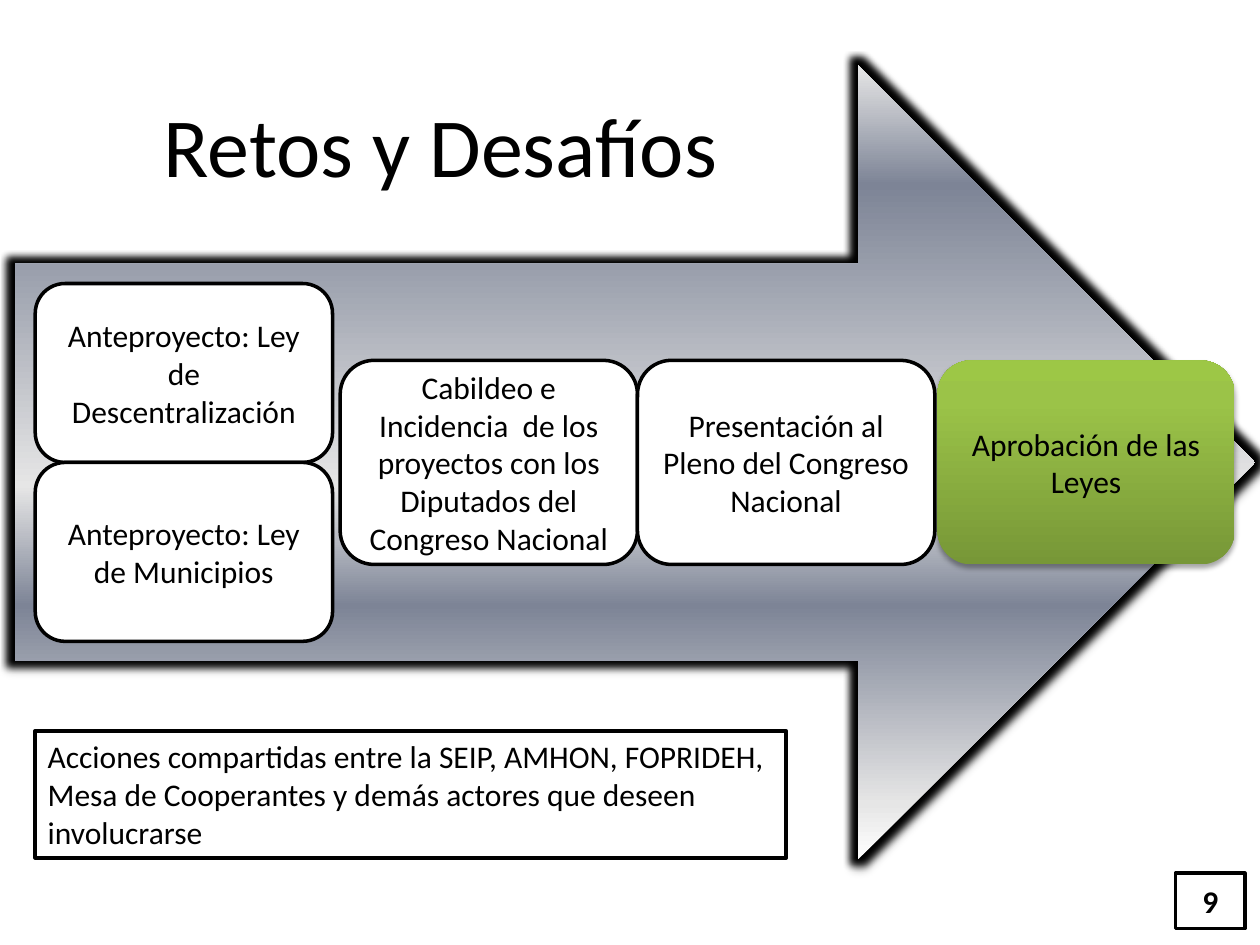
from dataclasses import dataclass

from lxml import etree
from pptx import Presentation
from pptx.dml.color import RGBColor
from pptx.enum.shapes import MSO_SHAPE
from pptx.enum.text import MSO_ANCHOR, PP_ALIGN
from pptx.oxml.ns import qn
from pptx.util import Inches, Pt

RECTANGLE = MSO_SHAPE.RECTANGLE
ROUNDED = MSO_SHAPE.ROUNDED_RECTANGLE
ARROW = MSO_SHAPE.RIGHT_ARROW
CENTER = PP_ALIGN.CENTER
LEFT = PP_ALIGN.LEFT
MIDDLE = MSO_ANCHOR.MIDDLE
TOP = MSO_ANCHOR.TOP

BLACK = RGBColor(0x00, 0x00, 0x00)
WHITE = RGBColor(0xFF, 0xFF, 0xFF)
SILVER = RGBColor(0xE6, 0xE6, 0xE6)
SLATE = RGBColor(0x7D, 0x84, 0x96)
DARK_GREEN = RGBColor(0x77, 0x97, 0x37)
GREEN = RGBColor(0x9B, 0xC3, 0x48)
LIGHT_GREEN = RGBColor(0x9D, 0xC7, 0x46)

STEEL_STOPS = [(0, WHITE), (7, SILVER), (32, SLATE), (47, SILVER), (85, SLATE), (100, SILVER)]
GREEN_STOPS = [(0, DARK_GREEN), (80, GREEN), (100, LIGHT_GREEN)]

FONT = "Calibri"
STEP_WIDTH = 2.36
LAW_HEIGHT = 1.42
STEP_TOP, STEP_HEIGHT = 2.86, 1.62


@dataclass
class Box:
    text: str
    left: float
    top: float
    width: float
    height: float
    kind: int = ROUNDED
    align: int = CENTER
    anchor: int = MIDDLE
    bold: bool = False


BOXES = [
    Box("Anteproyecto: Ley de Descentralización", 0.28, 2.25, STEP_WIDTH, LAW_HEIGHT),
    Box("Anteproyecto: Ley de Municipios", 0.28, 2.25 + LAW_HEIGHT, STEP_WIDTH, LAW_HEIGHT),
    Box("Cabildeo e Incidencia  de los proyectos con los Diputados del Congreso Nacional",
        2.7, STEP_TOP, STEP_WIDTH, STEP_HEIGHT),
    Box("Presentación al Pleno del Congreso Nacional",
        2.7 + STEP_WIDTH, STEP_TOP, STEP_WIDTH, STEP_HEIGHT),
    Box("Acciones compartidas entre la SEIP, AMHON, FOPRIDEH, Mesa de Cooperantes "
        "y demás actores que deseen involucrarse",
        0.28, 5.8, 5.96, 1.01, RECTANGLE, LEFT, TOP),
    Box("9", 9.33, 6.93, 0.55, 0.44, RECTANGLE, bold=True),
]
APPROVAL = Box("Aprobación de las Leyes", 7.44, STEP_TOP, STEP_WIDTH, STEP_HEIGHT)


def write(shape, text: str, size: int, align: int, anchor: int, bold: bool = False) -> None:
    frame = shape.text_frame
    frame.word_wrap = True
    frame.vertical_anchor = anchor
    paragraph = frame.paragraphs[0]
    paragraph.text = text
    paragraph.alignment = align
    paragraph.font.name = FONT
    paragraph.font.size = Pt(size)
    paragraph.font.bold = bold
    paragraph.font.color.rgb = BLACK


def add_box(page, box: Box):
    shape = page.shapes.add_shape(box.kind, Inches(box.left), Inches(box.top),
                                  Inches(box.width), Inches(box.height))
    shape.shadow.inherit = False
    shape.fill.solid()
    shape.fill.fore_color.rgb = WHITE
    shape.line.color.rgb = BLACK
    shape.line.width = Pt(2)
    write(shape, box.text, 18, box.align, box.anchor, box.bold)
    return shape


def add_color(parent, color: RGBColor, alpha: int = 100) -> None:
    node = etree.SubElement(parent, qn("a:srgbClr"), val=str(color))
    if alpha < 100:
        etree.SubElement(node, qn("a:alpha"), val=str(alpha * 1000))


def set_gradient(shape, stops: list[tuple[int, RGBColor]]) -> None:
    shape.line.fill.background()
    shape.fill.background()
    properties = shape.element.spPr
    gradient = etree.Element(qn("a:gradFill"), rotWithShape="1")
    stop_list = etree.SubElement(gradient, qn("a:gsLst"))
    for position, color in stops:
        add_color(etree.SubElement(stop_list, qn("a:gs"), pos=str(position * 1000)), color)
    etree.SubElement(gradient, qn("a:lin"), ang=str(270 * 60000), scaled="0")
    properties.replace(properties.find(qn("a:noFill")), gradient)


def add_effects(shape, glow: float = 0) -> None:
    shape.shadow.inherit = False
    effects = shape.element.spPr.find(qn("a:effectLst"))
    if glow:
        add_color(etree.SubElement(effects, qn("a:glow"), rad=str(Pt(glow))), BLACK)
    shadow = etree.SubElement(effects, qn("a:outerShdw"), blurRad=str(Pt(3.1)),
                              dist=str(Pt(1.8)), dir=str(90 * 60000), rotWithShape="0")
    add_color(shadow, BLACK, 35)


def main() -> None:
    deck = Presentation()
    deck.slide_width, deck.slide_height = Inches(10), Inches(7.5)
    page = deck.slides.add_slide(deck.slide_layouts[5])

    title = page.shapes.title
    title.left, title.top = Inches(0.26), Inches(0.52)
    title.width, title.height = Inches(6.47), Inches(1.25)
    write(title, "Retos y Desafíos", 48, CENTER, MIDDLE)

    arrow = page.shapes.add_shape(ARROW, Inches(0.12), Inches(0.52), Inches(9.84), Inches(6.3))
    set_gradient(arrow, STEEL_STOPS)
    add_effects(arrow, glow=8)
    title.element.addprevious(arrow.element)

    for box in BOXES:
        add_box(page, box)
    approval = add_box(page, APPROVAL)
    set_gradient(approval, GREEN_STOPS)
    add_effects(approval)

    deck.save("out.pptx")


if __name__ == "__main__":
    main()
